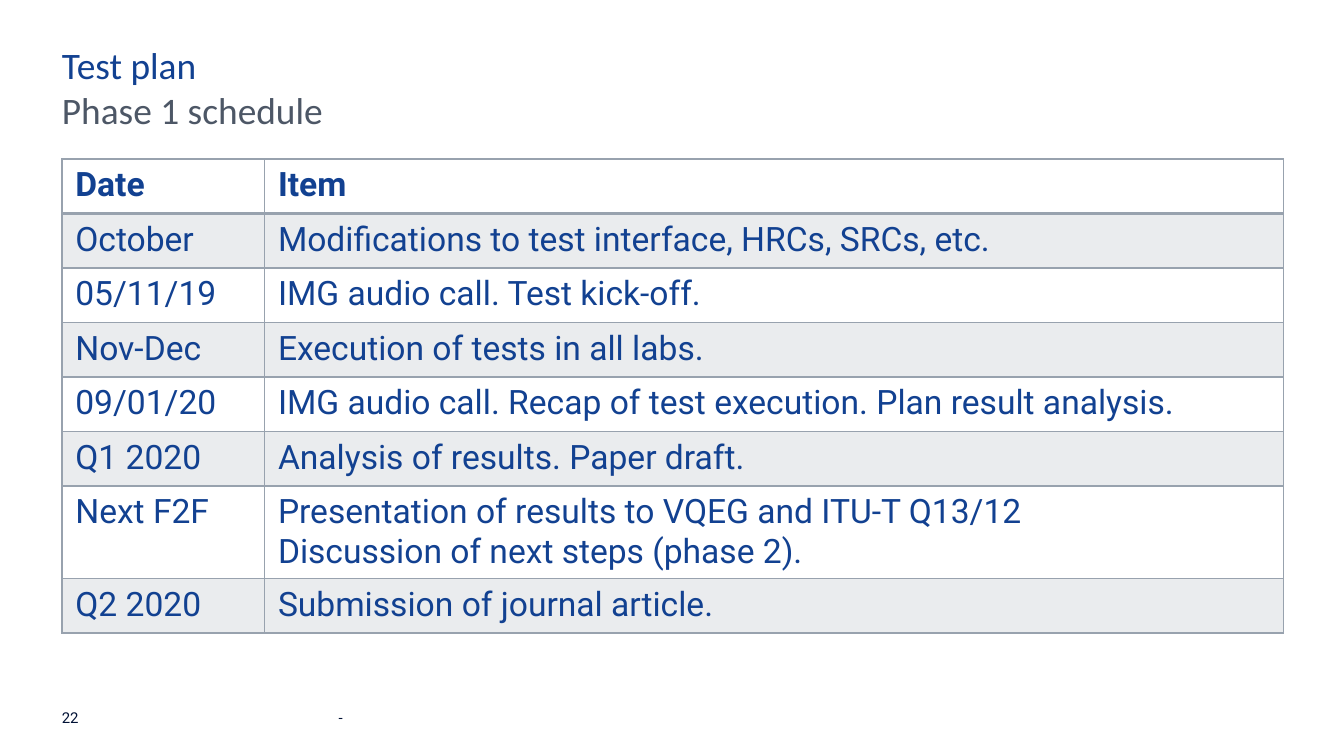
from lxml.etree import SubElement
from pptx import Presentation
from pptx.dml.color import RGBColor
from pptx.enum.text import MSO_ANCHOR, MSO_AUTO_SIZE, PP_ALIGN
from pptx.oxml.ns import qn
from pptx.util import Cm, Pt

BLUE, SLATE, GREY, INK = "124191", "4D5766", "98A2AE", "001135"
LEFT, WIDTH = 1.17, 23.09


def color(value):
    return RGBColor.from_string(value)


def write_line(shape, text, place, size, font, ink, anchor):
    shape.left, shape.top, shape.width, shape.height = [Cm(n) for n in place]
    frame = shape.text_frame
    frame.word_wrap = True
    frame.auto_size = MSO_AUTO_SIZE.NONE
    frame.vertical_anchor = anchor
    frame.margin_left = frame.margin_right = 0
    frame.margin_top = frame.margin_bottom = 0
    para = frame.paragraphs[0]
    para.text = text
    para.alignment = PP_ALIGN.LEFT
    para.space_before = Pt(0)
    para.font.size = Pt(size)
    para.font.name = font
    para.font.color.rgb = color(ink)
    return para


deck = Presentation()
deck.slide_width, deck.slide_height = Cm(25.4), Cm(14.28)
page = deck.slides.add_slide(deck.slide_layouts[1])

# Title and subtitle
write_line(page.shapes.title, "Test plan", (LEFT, 0.79, WIDTH, 0.86),
           20, "Calibri", BLUE, MSO_ANCHOR.TOP)
subtitle = write_line(page.placeholders[1], "Phase 1 schedule",
                      (LEFT, 1.65, WIDTH, 0.86), 20, "Calibri", SLATE,
                      MSO_ANCHOR.TOP)
properties = subtitle._p.get_or_add_pPr()
properties.set("marL", "0")
properties.set("indent", "0")
bullet = SubElement(properties, qn("a:buNone"))
properties.insert_element_before(bullet, "a:tabLst", "a:defRPr", "a:extLst")

# Schedule table
schedule = [
    ("Date", "Item"),
    ("October", "Modifications to test interface, HRCs, SRCs, etc."),
    ("05/11/19", "IMG audio call. Test kick-off."),
    ("Nov-Dec", "Execution of tests in all labs."),
    ("09/01/20", "IMG audio call. Recap of test execution. Plan result analysis."),
    ("Q1 2020", "Analysis of results. Paper draft."),
    ("Next F2F", "Presentation of results to VQEG and ITU-T Q13/12\n"
                 "Discussion of next steps (phase 2)."),
    ("Q2 2020", "Submission of journal article."),
]
table = page.shapes.add_table(len(schedule), 2, Cm(LEFT), Cm(3), Cm(WIDTH),
                              Cm(8.96)).table
table.columns[0].width, table.columns[1].width = Cm(3.83), Cm(19.26)

for row, entry in enumerate(schedule):
    table.rows[row].height = Cm(1.75 if "\n" in entry[1] else 1.03)
    for column, text in enumerate(entry):
        cell = table.cell(row, column)
        cell.text = text
        for para in cell.text_frame.paragraphs:
            para.font.size = Pt(18)
            para.font.name = "Roboto"
            para.font.bold = row == 0
            para.font.color.rgb = color(BLUE)

        # Borders, heavier between the header and the first row
        cell_properties = cell._tc.get_or_add_tcPr()
        for side in ("L", "R", "T", "B"):
            heavy = (row, side) in ((0, "B"), (1, "T"))
            border = SubElement(cell_properties, qn(f"a:ln{side}"),
                                w=str(Pt(2 if heavy else 1)))
            stroke = SubElement(border, qn("a:solidFill"))
            SubElement(stroke, qn("a:srgbClr"), val=GREY)

        # Translucent bands on every second row
        if row % 2:
            cell.fill.solid()
            cell.fill.fore_color.rgb = color(GREY)
            tint = cell_properties.find(qn("a:solidFill")).find(qn("a:srgbClr"))
            SubElement(tint, qn("a:alpha"), val="20000")
        else:
            cell.fill.background()

# Page number and footer
for text, left, width in (("22", LEFT, 0.71), ("-", 6.4, 12.6)):
    place = (left, 13.39, width, 0.33)
    box = page.shapes.add_textbox(*[Cm(n) for n in place])
    write_line(box, text, place, 8, "Roboto", INK, MSO_ANCHOR.BOTTOM)

deck.save("out.pptx")
